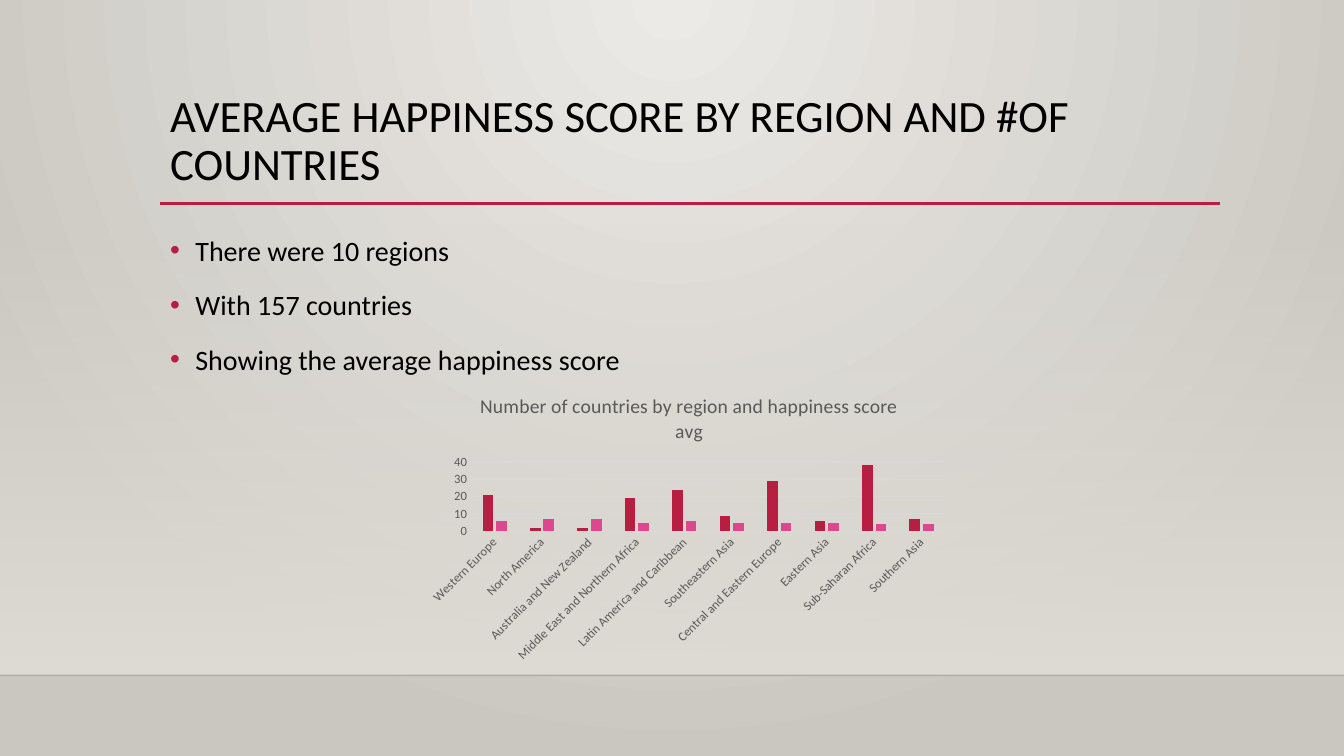
"""Build the slide on average happiness score by region and number of countries."""
from dataclasses import dataclass

import lxml.etree
import pptx
import pptx.chart.data
import pptx.dml.color
import pptx.enum.chart
import pptx.enum.shapes
import pptx.enum.text
import pptx.oxml
import pptx.oxml.ns
import pptx.util

Pt = pptx.util.Pt
RGBColor = pptx.dml.color.RGBColor
qn = pptx.oxml.ns.qn

BLACK = RGBColor(0x00, 0x00, 0x00)
CRIMSON = RGBColor(0xB7, 0x1E, 0x42)
PINK = RGBColor(0xDE, 0x47, 0x8E)
GREY_TEXT = RGBColor(0x59, 0x59, 0x59)
GREY_LINE = RGBColor(0xD9, 0xD9, 0xD9)
WALL_LIGHT = RGBColor(0xEC, 0xEA, 0xE7)
WALL_DARK = RGBColor(0xCA, 0xC7, 0xC1)
HAZE = RGBColor(0xDF, 0xDB, 0xD5)
FLOOR_EDGE = RGBColor(0x00, 0x00, 0x01)
FONT = "Calibri"


@dataclass
class Rule:
    left: float
    right: float
    y: float
    color: RGBColor
    weight: float
    opacity: int


@dataclass
class Copy:
    top: float
    height: float
    size: float
    line_spacing: float
    lines: list[str]
    bulleted: bool


@dataclass
class Measure:
    name: str
    values: list[int]
    color: RGBColor


RULES = [
    Rule(0, 960, 482.4, FLOOR_EDGE, 1, 20),
    Rule(114.5, 871.2, 145.4, CRIMSON, 2.5, 100),
]
COPIES = [
    Copy(63.4, 82.8, 32, 0.9, ["AVERAGE HAPPINESS SCORE BY REGION AND #OF COUNTRIES"], False),
    Copy(158.4, 271.4, 20, 1.2,
         ["There were 10 regions", "With 157 countries", "Showing the average happiness score"], True),
]
REGIONS = [
    "Western Europe", "North America", "Australia and New Zealand",
    "Middle East and Northern Africa", "Latin America and Caribbean",
    "Southeastern Asia", "Central and Eastern Europe", "Eastern Asia",
    "Sub-Saharan Africa", "Southern Asia",
]
MEASURES = [
    Measure("Series 1", [21, 2, 2, 19, 24, 9, 29, 6, 38, 7], CRIMSON),
    Measure("Series 2", [6, 7, 7, 5, 6, 5, 5, 5, 4, 4], PINK),
]
CHART_TITLE = "Number of countries by region and happiness score avg"


def gradient(first: str, last: str, direction: str):
    """Return a two-stop gradient fill element."""
    return pptx.oxml.parse_xml(
        f'<a:gradFill {pptx.oxml.ns.nsdecls("a")} rotWithShape="1"><a:gsLst>'
        f'<a:gs pos="0">{first}</a:gs><a:gs pos="100000">{last}</a:gs>'
        f'</a:gsLst>{direction}</a:gradFill>')


def swap_gradient(holder, replacement) -> None:
    """Put a custom gradient in the place of the default one."""
    default = next(holder.iter(qn("a:gradFill")))
    default.getparent().replace(default, replacement)


def paint_wall(slide) -> None:
    """Draw the radial background and the haze above the floor."""
    slide.background.fill.gradient()
    swap_gradient(slide.element, gradient(
        f'<a:srgbClr val="{WALL_LIGHT}"/>', f'<a:srgbClr val="{WALL_DARK}"/>',
        '<a:path path="circle"><a:fillToRect l="43000" t="0" r="43000" b="100000"/></a:path>'))
    haze = slide.shapes.add_shape(
        pptx.enum.shapes.MSO_SHAPE.RECTANGLE, Pt(0), Pt(159.1), Pt(960), Pt(323.3))
    haze.shadow.inherit = False
    haze.line.fill.background()
    haze.fill.gradient()
    swap_gradient(haze.element, gradient(
        f'<a:srgbClr val="{HAZE}"><a:alpha val="0"/></a:srgbClr>',
        f'<a:srgbClr val="{HAZE}"/>', '<a:lin ang="5400000" scaled="0"/>'))


def draw_rule(slide, rule: Rule) -> None:
    """Draw one horizontal line."""
    line = slide.shapes.add_connector(
        pptx.enum.shapes.MSO_CONNECTOR.STRAIGHT,
        Pt(rule.left), Pt(rule.y), Pt(rule.right), Pt(rule.y))
    line.line.color.rgb = rule.color
    line.line.width = Pt(rule.weight)
    properties = line.element.spPr
    if rule.opacity < 100:
        tint = next(properties.iter(qn("a:srgbClr")))
        lxml.etree.SubElement(tint, qn("a:alpha"), val=str(rule.opacity * 1000))
    lxml.etree.SubElement(properties, qn("a:effectLst"))


def add_bullet(paragraph) -> None:
    """Give a paragraph a crimson bullet with a hanging indent."""
    properties = paragraph._p.get_or_add_pPr()
    properties.set("marL", str(Pt(18)))
    properties.set("indent", str(-Pt(18)))
    color = lxml.etree.SubElement(properties, qn("a:buClr"))
    lxml.etree.SubElement(color, qn("a:srgbClr"), val=str(CRIMSON))
    lxml.etree.SubElement(properties, qn("a:buFont"), typeface="Arial")
    lxml.etree.SubElement(properties, qn("a:buChar"), char="•")


def style_font(font, size: float, color: RGBColor) -> None:
    """Set the typeface, size and colour of a font."""
    font.name = FONT
    font.size = Pt(size)
    font.bold = False
    font.color.rgb = color


def write_copy(slide, block: Copy) -> None:
    """Write one block of text."""
    frame = slide.shapes.add_textbox(Pt(114.5), Pt(block.top), Pt(756), Pt(block.height)).text_frame
    frame.word_wrap = True
    frame.vertical_anchor = pptx.enum.text.MSO_ANCHOR.TOP
    frame.text = "\n".join(block.lines)
    for index, paragraph in enumerate(frame.paragraphs):
        if block.bulleted:
            add_bullet(paragraph)
        paragraph.line_spacing = block.line_spacing
        if index:
            paragraph.space_before = Pt(10)
        style_font(paragraph.runs[0].font, block.size, BLACK)


def draw_chart(slide) -> None:
    """Draw the clustered columns by region."""
    data = pptx.chart.data.CategoryChartData()
    data.categories = REGIONS
    for measure in MEASURES:
        data.add_series(measure.name, measure.values)
    chart = slide.shapes.add_chart(
        pptx.enum.chart.XL_CHART_TYPE.COLUMN_CLUSTERED,
        Pt(297.4), Pt(270), Pt(389.5), Pt(206.6), data).chart
    style_font(chart.font, 10, BLACK)
    chart.has_legend = False
    chart.has_title = True
    chart.chart_title.text_frame.text = CHART_TITLE
    style_font(chart.chart_title.text_frame.paragraphs[0].runs[0].font, 14, GREY_TEXT)
    chart.chart_title.include_in_layout = False

    columns = chart.plots[0]
    columns.gap_width = 219
    columns.overlap = -27
    columns.vary_by_categories = False
    for series, measure in zip(columns.series, MEASURES):
        series.format.fill.solid()
        series.format.fill.fore_color.rgb = measure.color

    for axis in (chart.category_axis, chart.value_axis):
        axis.major_tick_mark = axis.minor_tick_mark = pptx.enum.chart.XL_TICK_MARK.NONE
        style_font(axis.tick_labels.font, 9, GREY_TEXT)
    chart.category_axis._element.find(qn("c:txPr")).find(qn("a:bodyPr")).set("rot", "-2700000")
    chart.value_axis.format.line.fill.background()
    chart.value_axis.maximum_scale = 40
    chart.value_axis.major_unit = 10
    for line in (chart.category_axis.format.line, chart.value_axis.major_gridlines.format.line):
        line.color.rgb = GREY_LINE
        line.width = Pt(0.75)

    plot_area = next(chart._chartSpace.iter(qn("c:plotArea")))
    for previous in plot_area.findall(qn("c:layout")):
        plot_area.remove(previous)
    plot_area.insert(0, pptx.oxml.parse_xml(
        f'<c:layout {pptx.oxml.ns.nsdecls("c")}><c:manualLayout><c:layoutTarget val="inner"/>'
        '<c:xMode val="edge"/><c:yMode val="edge"/><c:x val="0.1"/><c:y val="0.29"/>'
        '<c:w val="0.87"/><c:h val="0.24"/></c:manualLayout></c:layout>'))


def main() -> None:
    """Assemble and save the slide."""
    deck = pptx.Presentation()
    deck.slide_width, deck.slide_height = Pt(960), Pt(540)
    slide = deck.slides.add_slide(deck.slide_layouts[6])
    paint_wall(slide)
    for rule in RULES:
        draw_rule(slide, rule)
    for block in COPIES:
        write_copy(slide, block)
    draw_chart(slide)
    deck.save("out.pptx")


if __name__ == "__main__":
    main()
